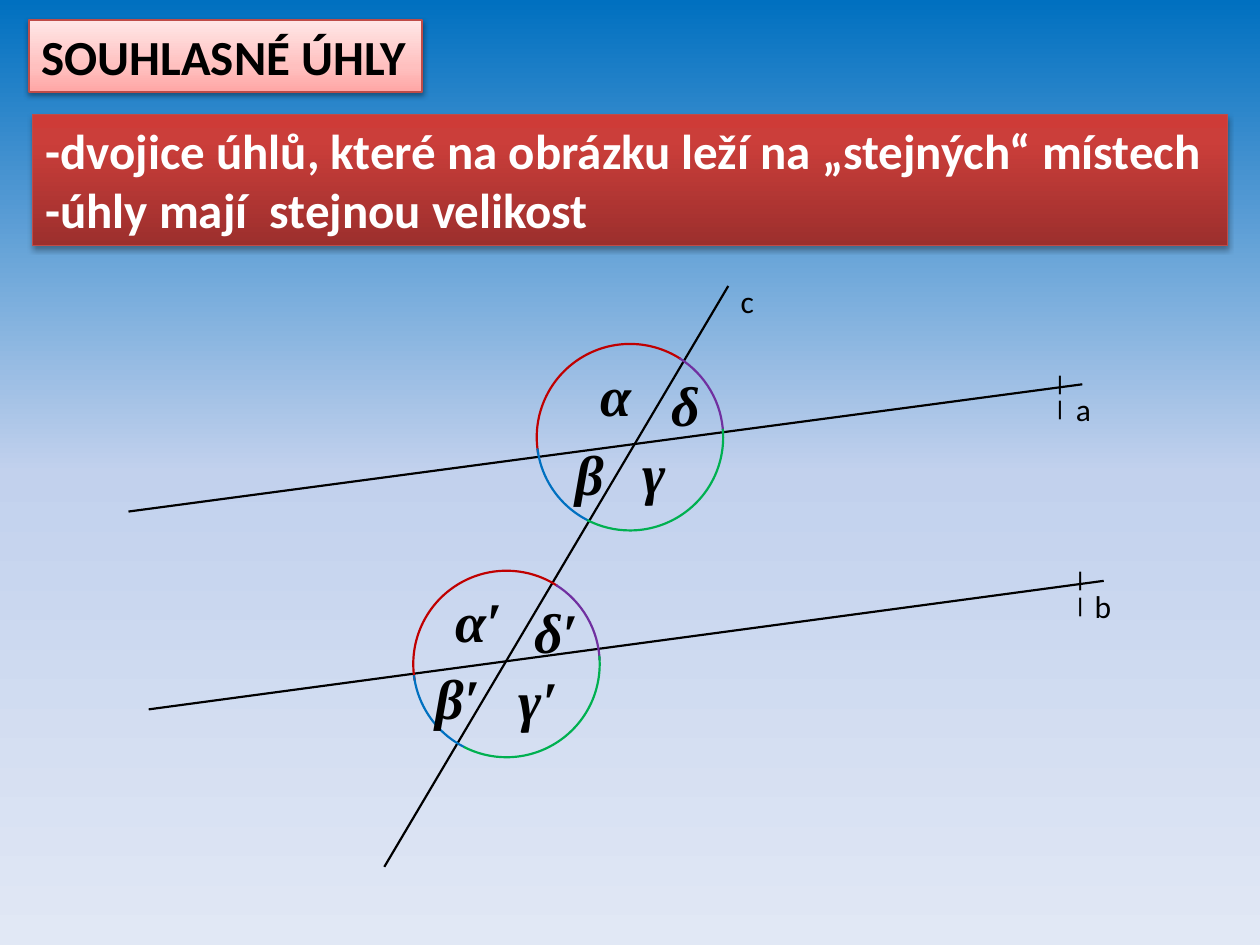
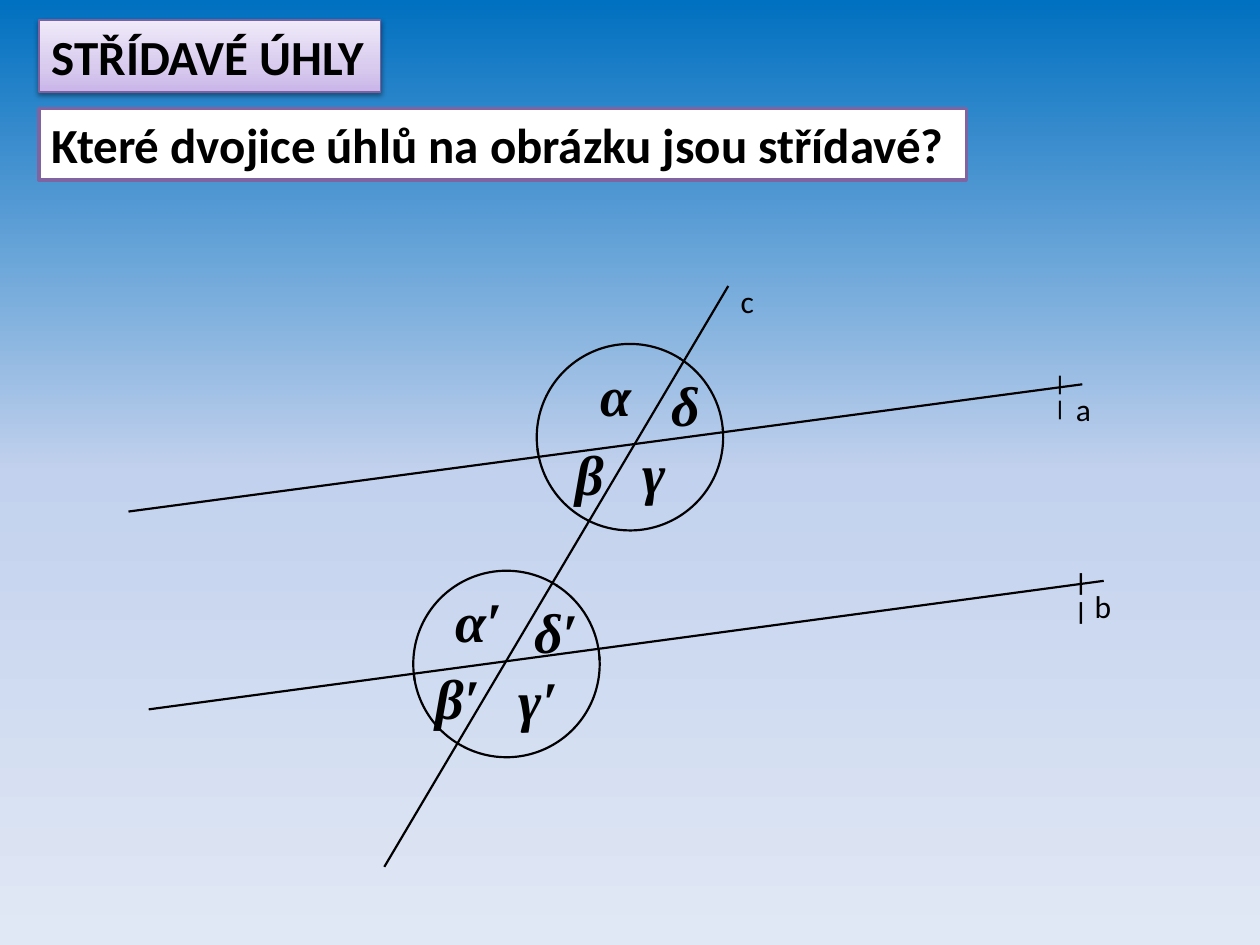
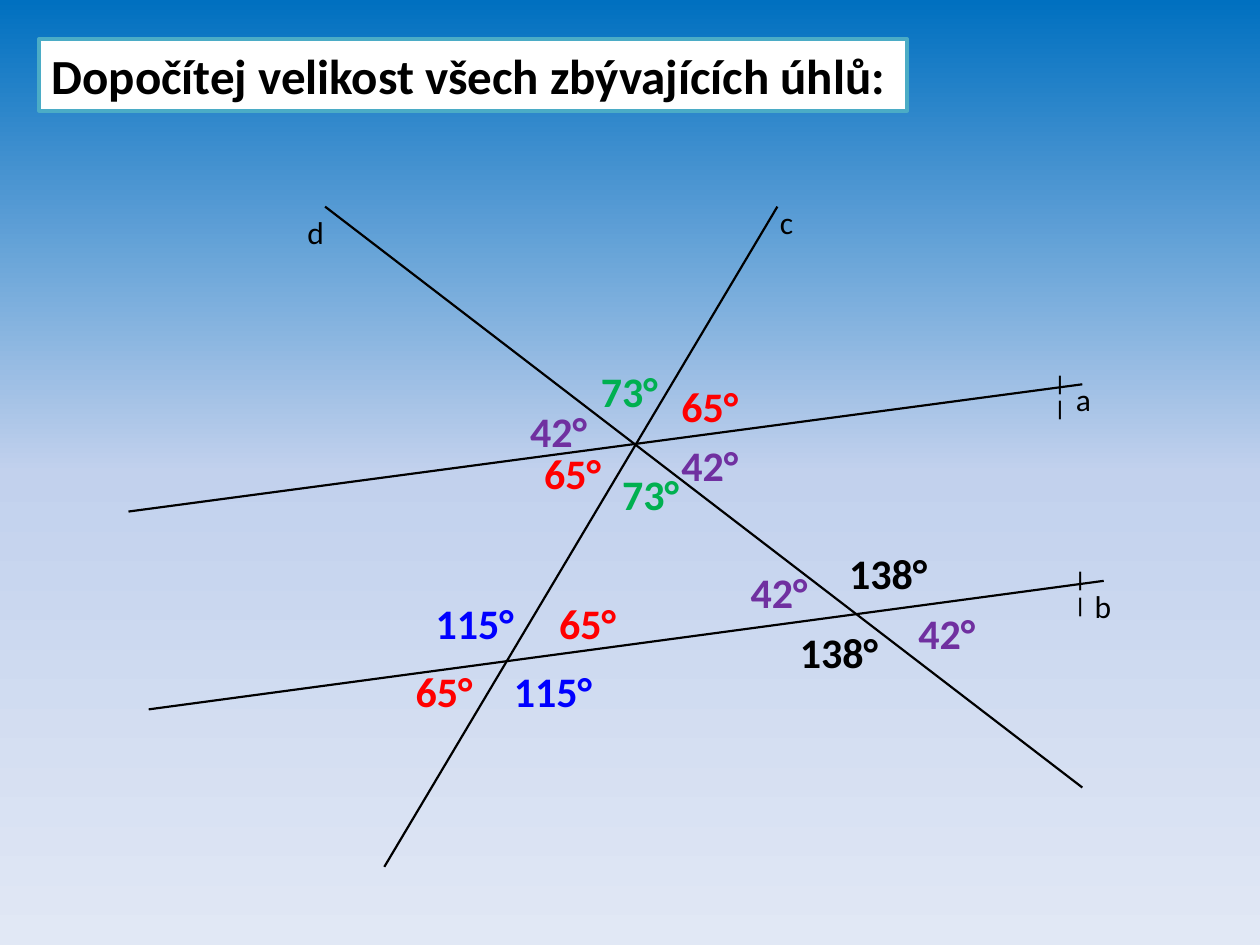
from lxml.etree import SubElement
from pptx import Presentation
from pptx.dml.color import RGBColor
from pptx.enum.shapes import MSO_CONNECTOR as Connector, MSO_SHAPE as Shape
from pptx.enum.text import MSO_ANCHOR as Anchor, MSO_AUTO_SIZE as AutoSize, PP_ALIGN as Align
from pptx.oxml.ns import qn
from pptx.util import Inches, Pt

BLACK, WHITE = "000000", "FFFFFF"
RED, PURPLE, BLUE, GREEN = "C00000", "7030A0", "0070C0", "00B050"
BRIGHT_RED, BRIGHT_BLUE = "FF0000", "0000FF"
SKY = [(0, BLUE), (50, "C2D1ED"), (100, "E1E8F5")]
PINK = [(0, "FFA6A5"), (35, "FFC0BF"), (100, "FFE7E7")]
BRICK = [(0, "9C2F2D"), (80, "CB3E3A"), (100, "CE3B37")]
LILAC = [(0, "C9B5E8"), (35, "D8CBEE"), (100, "F0EAF9")]
BODY_FONT, SYMBOL_FONT = "Calibri", "Times New Roman"

LINE_A = (1.02, 4.06, 8.59, 3.05)
LINE_B = (1.18, 5.63, 8.76, 4.61)
LINE_C = (5.78, 2.27, 3.05, 6.88)
LONG_LINE_C = (6.17, 1.64, 3.05, 6.88)
LINE_D = (2.58, 1.64, 8.59, 6.25)
LABEL_B = ("b", 8.59, 4.61, 0.34)

CIRCLE_SIZE = 1.48
CIRCLES = [(4.26, 2.73), (3.28, 4.53)]
ARC_DEGREES = [(169.73, 303.08), (302.09, 357.92), (116.54, 173.02), (354.9, 117.33)]
SYMBOLS = [
    ("α", 4.67, 2.81, 0.39), ("β", 4.47, 3.44, 0.37),
    ("γ", 5, 3.43, 0.34), ("δ", 5.23, 2.89, 0.37),
    ("α′", 3.52, 4.61, 0.68), ("β′", 3.36, 5.22, 0.7),
    ("γ′", 4.02, 5.23, 0.59), ("δ′", 4.14, 4.69, 0.7),
]
ANGLES = [
    ("65°", BRIGHT_RED, [(5.31, 2.97), (4.34, 4.69), (4.22, 3.5), (3.2, 5.23)]),
    ("42°", PURPLE, [(5.86, 4.45), (7.19, 4.77), (5.31, 3.44), (4.11, 3.17)]),
    ("73°", GREEN, [(4.67, 2.85), (4.84, 3.67)]),
    ("138°", BLACK, [(6.64, 4.3), (6.25, 4.92)]),
    ("115°", BRIGHT_BLUE, [(3.98, 5.23), (3.36, 4.69)]),
]


def color(value):
    """Turn a hex string into a colour."""
    return RGBColor.from_string(value)


def set_gradient(owner, fill, stops, angle):
    """Fill the owner with a linear gradient."""
    fill.background()
    empty = owner.find(".//" + qn("a:noFill"))
    gradient = empty.makeelement(qn("a:gradFill"), {"rotWithShape": "1"})
    stop_list = SubElement(gradient, qn("a:gsLst"))
    for position, value in stops:
        stop = SubElement(stop_list, qn("a:gs"), pos=str(position * 1000))
        SubElement(stop, qn("a:srgbClr"), val=value)
    SubElement(gradient, qn("a:lin"), ang=str(angle * 60000), scaled="0")
    empty.getparent().replace(empty, gradient)


def add_shadow(box, alpha, distance):
    """Give the box a soft shadow below it."""
    effects = box.element.spPr.find(qn("a:effectLst"))
    shadow = SubElement(effects, qn("a:outerShdw"), blurRad=str(Pt(3.1)),
                        dist=str(Pt(distance)), dir="5400000", rotWithShape="0")
    tone = SubElement(shadow, qn("a:srgbClr"), val=BLACK)
    SubElement(tone, qn("a:alpha"), val=str(alpha * 1000))


def format_text(frame, size, value, font=BODY_FONT, bold=False, italic=False):
    """Format every run of a text frame."""
    for para in frame.paragraphs:
        for span in para.runs:
            span.font.name = font
            span.font.size = Pt(size)
            span.font.bold = bold
            span.font.italic = italic
            span.font.color.rgb = color(value)


def fill_banner(box, text, place, edge, edge_width, stops=None, text_color=BLACK):
    """Turn a placeholder into a framed banner."""
    box.left, box.top, box.width, box.height = map(Inches, place)
    if stops:
        set_gradient(box.element.spPr, box.fill, stops, 270)
    else:
        box.fill.solid()
        box.fill.fore_color.rgb = color(WHITE)
    box.line.color.rgb = color(edge)
    box.line.width = Pt(edge_width)
    box.shadow.inherit = False
    frame = box.text_frame
    frame.text = text
    frame.word_wrap = True
    frame.auto_size = AutoSize.NONE
    frame.vertical_anchor = Anchor.TOP
    for para in frame.paragraphs:
        para.alignment = Align.LEFT
        para.space_before = Pt(0)
        properties = para._p.get_or_add_pPr()
        properties.set("marL", "0")
        properties.set("indent", "0")
        SubElement(properties, qn("a:buNone"))
    format_text(frame, 28, text_color, bold=True)


def add_text(page, text, left, top, width, height, size, value=BLACK, wrap=False, **style):
    """Add a small text box."""
    box = page.shapes.add_textbox(*map(Inches, (left, top, width, height)))
    frame = box.text_frame
    frame.text = text
    frame.word_wrap = wrap
    frame.auto_size = AutoSize.SHAPE_TO_FIT_TEXT
    format_text(frame, size, value, **style)


def add_lines(page, *lines):
    """Draw straight lines."""
    for ends in lines:
        line = page.shapes.add_connector(Connector.STRAIGHT, *map(Inches, ends))
        line.line.color.rgb = color(BLACK)
        line.line.width = Pt(1.25)
        SubElement(line.element.spPr, qn("a:effectLst"))


def add_labels(page, *labels):
    """Name the lines."""
    for text, left, top, width in labels:
        add_text(page, text, left, top, width, 0.4, 18)


def add_parallel_marks(page, lower_size=12):
    """Mark lines a and b as parallel."""
    for left, top, size in [(8.28, 2.89, 12), (8.44, 4.45, lower_size)]:
        add_text(page, "||", left, top, 0.27, 0.3, size, wrap=True, bold=True, italic=True)


def add_angle_circles(page, arc_colors):
    """Draw both circles as four arcs each."""
    for left, top in CIRCLES:
        for degrees, value in zip(ARC_DEGREES, arc_colors):
            arc = page.shapes.add_shape(
                Shape.ARC, *map(Inches, (left, top, CIRCLE_SIZE, CIRCLE_SIZE)))
            for index, angle in enumerate(degrees):
                arc.adjustments[index] = angle * 0.6
            arc.fill.background()
            arc.line.color.rgb = color(value)
            arc.line.width = Pt(1.25)
            arc.shadow.inherit = False


def add_transversal(page, arc_colors, lower_mark_size=12):
    """Draw two parallels cut by line c, with all angles named."""
    add_lines(page, LINE_A, LINE_B, LINE_C)
    add_labels(page, ("a", 8.44, 3.05, 0.32), LABEL_B, ("c", 5.78, 2.19, 0.31))
    add_parallel_marks(page, lower_mark_size)
    add_angle_circles(page, arc_colors)
    for text, left, top, width in SYMBOLS:
        add_text(page, text, left, top, width, 0.64, 32, wrap=True,
                 font=SYMBOL_FONT, bold=True, italic=True)


def build_corresponding(deck):
    """Build the slide on corresponding angles."""
    page = deck.slides.add_slide(deck.slide_layouts[1])
    title, body = page.placeholders
    fill_banner(title, "SOUHLASNÉ ÚHLY", (0.23, 0.16, 3.12, 0.57), "BF4C48", 0.75, PINK)
    add_shadow(title, 38, 1.6)
    facts = ("-dvojice úhlů, které na obrázku leží na „stejných“ místech\n"
             "-úhly mají  stejnou velikost")
    fill_banner(body, facts, (0.26, 0.91, 9.48, 1.04), "BF4C48", 0.75, BRICK, WHITE)
    add_shadow(body, 35, 1.8)
    add_transversal(page, [RED, PURPLE, BLUE, GREEN])


def build_alternate(deck):
    """Build the slide on alternate angles."""
    page = deck.slides.add_slide(deck.slide_layouts[1])
    title, body = page.placeholders
    fill_banner(title, "STŘÍDAVÉ ÚHLY", (0.31, 0.16, 2.71, 0.57), "7D60A0", 0.75, LILAC)
    add_shadow(title, 38, 1.6)
    fill_banner(body, "Které dvojice úhlů na obrázku jsou střídavé?",
                (0.31, 0.86, 7.36, 0.57), "8064A2", 2)
    add_transversal(page, [BLACK] * 4, 14)


def build_exercise(deck):
    """Build the slide with the angles to work out."""
    page = deck.slides.add_slide(deck.slide_layouts[5])
    fill_banner(page.shapes.title, "Dopočítej velikost všech zbývajících úhlů:",
                (0.31, 0.31, 6.89, 0.57), "4BACC6", 2)
    add_lines(page, LINE_A, LINE_B, LONG_LINE_C, LINE_D)
    add_labels(page, ("a", 8.44, 2.97, 0.32), LABEL_B,
               ("c", 6.09, 1.56, 0.31), ("d", 2.34, 1.64, 0.31))
    add_parallel_marks(page)
    for text, value, places in ANGLES:
        width = 0.66 if len(text) == 3 else 0.83
        for left, top in places:
            add_text(page, text, left, top, width, 0.5, 24, value, bold=True)


def main():
    """Build and save the deck."""
    deck = Presentation()
    deck.slide_width, deck.slide_height = Inches(10), Inches(7.5)
    master = deck.slide_master
    set_gradient(master.element, master.background.fill, SKY, 90)
    build_corresponding(deck)
    build_alternate(deck)
    build_exercise(deck)
    deck.save("out.pptx")


if __name__ == "__main__":
    main()
